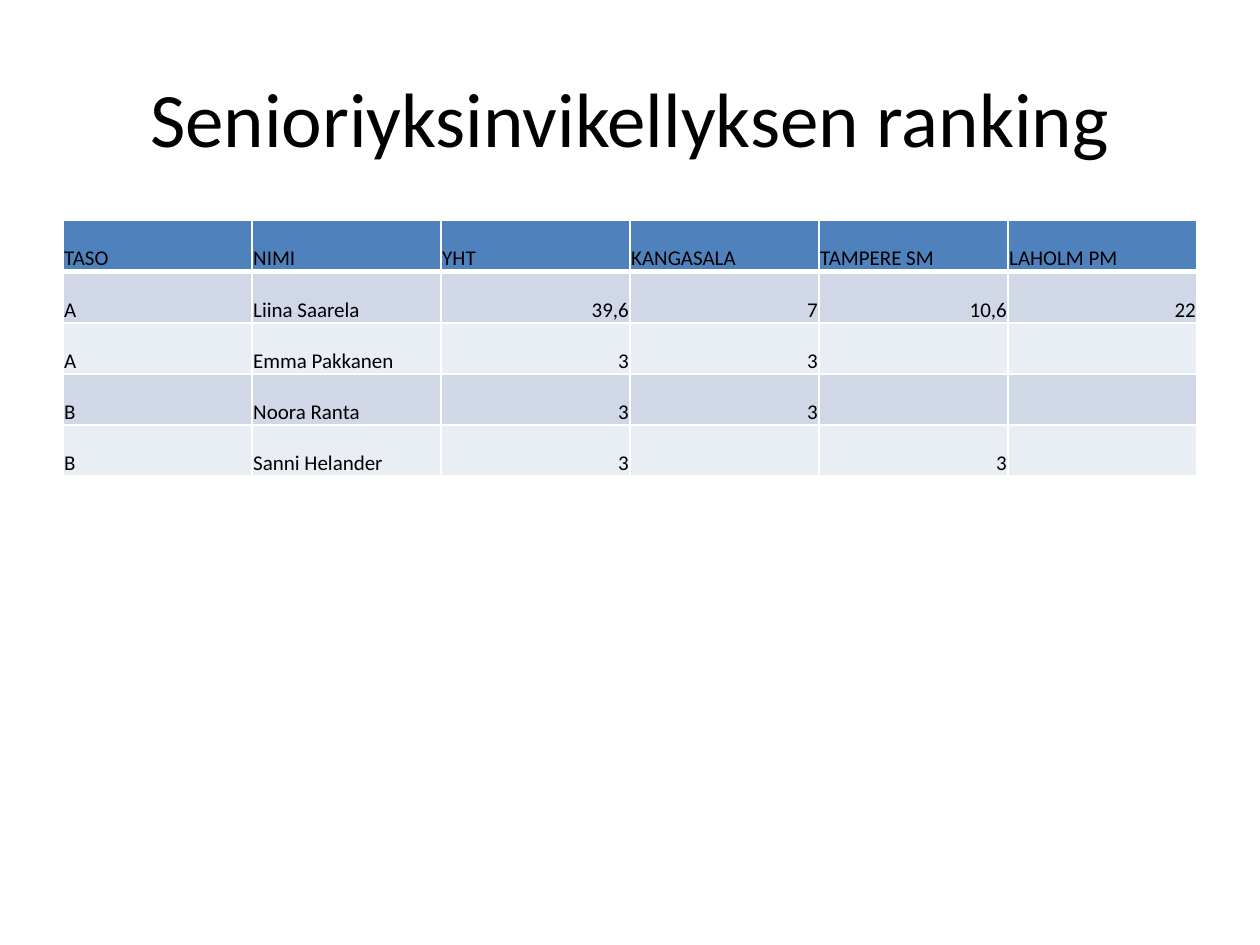
from lxml.etree import SubElement
from pptx import Presentation
from pptx.dml.color import RGBColor
from pptx.enum.text import MSO_ANCHOR, PP_ALIGN
from pptx.oxml.ns import qn
from pptx.util import Inches, Pt

HEADER = ["TASO", "NIMI", "YHT", "KANGASALA", "TAMPERE SM", "LAHOLM PM"]
PLAYERS = [
    ["A", "Liina Saarela", "39,6", "7", "10,6", "22"],
    ["A", "Emma Pakkanen", "3", "3", "", ""],
    ["B", "Noora Ranta", "3", "3", "", ""],
    ["B", "Sanni Helander", "3", "", "3", ""],
]
HEADER_FILL = "4F81BD"
BAND_FILLS = ["D0D8E8", "E9EDF4"]
FIRST_SCORE_COLUMN = 2


def color(value):
    return RGBColor.from_string(value)


def write_text(frame, text, size=12, align=PP_ALIGN.LEFT, fill="000000"):
    para = frame.paragraphs[0]
    para.alignment = align
    span = para.add_run()
    span.text = text
    span.font.name = "Calibri"
    span.font.size = Pt(size)
    span.font.bold = False
    span.font.color.rgb = color(fill)


def add_title(page, text):
    box = page.shapes.add_textbox(Inches(0.5), Inches(0.3), Inches(9), Inches(1.25))
    frame = box.text_frame
    frame.word_wrap = True
    frame.vertical_anchor = MSO_ANCHOR.MIDDLE
    write_text(frame, text, size=44, align=PP_ALIGN.CENTER)


def set_borders(cell, top=1, bottom=1):
    """Draw white cell borders; must run before the cell gets its fill."""
    properties = cell._tc.get_or_add_tcPr()
    for side, width in (("L", 1), ("R", 1), ("T", top), ("B", bottom)):
        line = SubElement(properties, qn(f"a:ln{side}"), w=str(Pt(width)))
        fill = SubElement(line, qn("a:solidFill"))
        SubElement(fill, qn("a:srgbClr"), val="FFFFFF")


def format_cell(cell, fill, **borders):
    cell.margin_left = cell.margin_top = cell.margin_right = Inches(0.01)
    cell.margin_bottom = 0
    cell.vertical_anchor = MSO_ANCHOR.BOTTOM
    set_borders(cell, **borders)
    cell.fill.solid()
    cell.fill.fore_color.rgb = color(fill)


def add_ranking_table(page):
    rows = [HEADER] + PLAYERS
    table = page.shapes.add_table(
        len(rows), len(HEADER), Inches(0.5), Inches(1.75), Inches(9), Inches(2.03)
    ).table
    table.first_row = table.horz_banding = False
    for row, values in enumerate(rows):
        fill = BAND_FILLS[(row - 1) % 2] if row else HEADER_FILL
        for column, value in enumerate(values):
            cell = table.cell(row, column)
            format_cell(cell, fill, top=3 if row == 1 else 1, bottom=1 if row else 3)
            is_score = row > 0 and column >= FIRST_SCORE_COLUMN
            if value:
                align = PP_ALIGN.RIGHT if is_score else PP_ALIGN.LEFT
                write_text(cell.text_frame, value, align=align)


def main():
    deck = Presentation()
    deck.slide_width, deck.slide_height = Inches(10), Inches(7.5)
    page = deck.slides.add_slide(deck.slide_layouts[6])
    add_title(page, "Senioriyksinvikellyksen ranking")
    add_ranking_table(page)
    deck.save("out.pptx")


if __name__ == "__main__":
    main()
